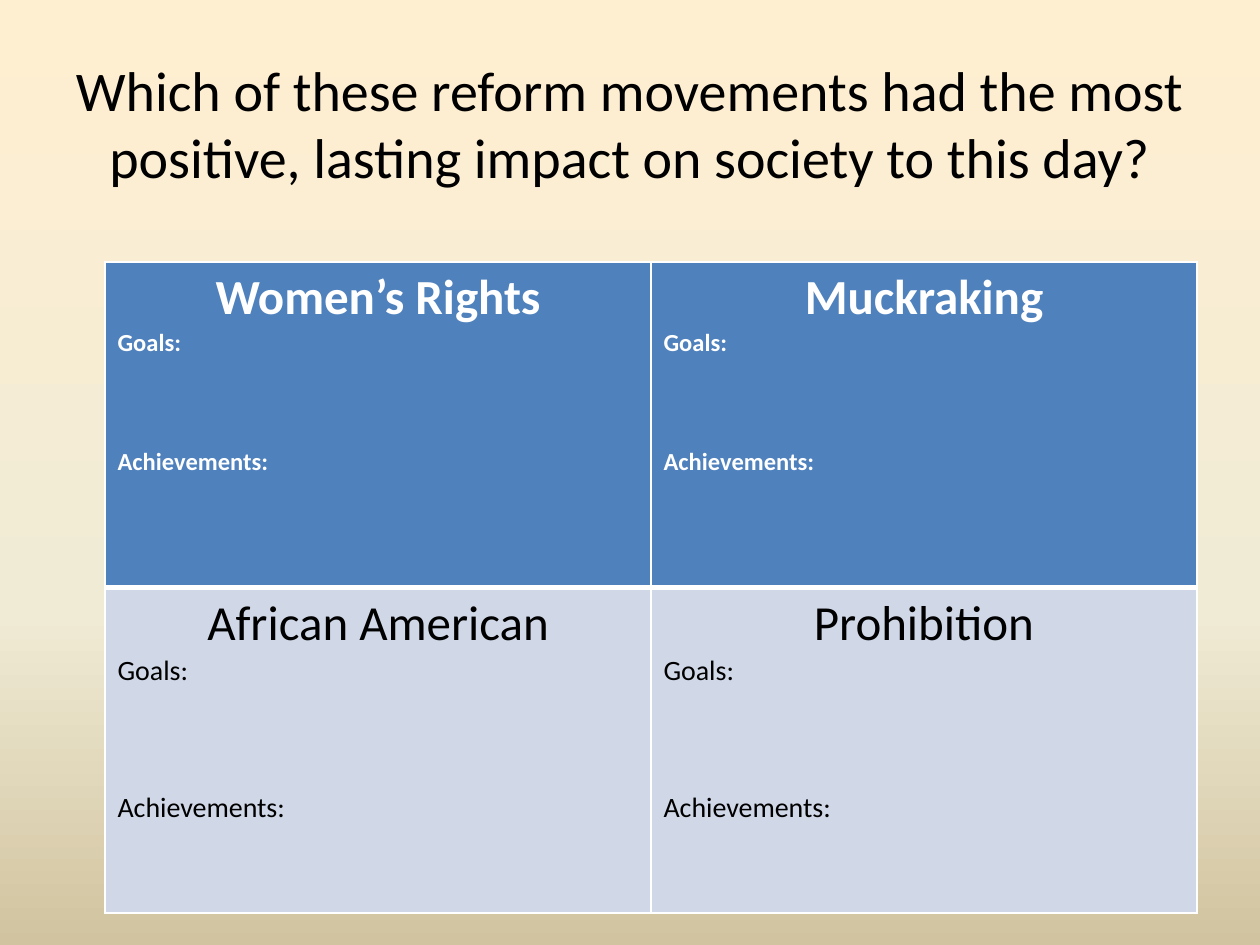
from copy import deepcopy

from lxml import etree
from pptx import Presentation
from pptx.dml.color import RGBColor
from pptx.enum.text import MSO_ANCHOR, PP_ALIGN
from pptx.oxml.ns import qn
from pptx.util import Pt

MIDDLE = MSO_ANCHOR.MIDDLE
LEFT, CENTER = PP_ALIGN.LEFT, PP_ALIGN.CENTER
BLACK = RGBColor(0x00, 0x00, 0x00)
WHITE = RGBColor(0xFF, 0xFF, 0xFF)
BLUE = RGBColor(0x4F, 0x81, 0xBD)
PALE = RGBColor(0xD0, 0xD8, 0xE8)
CREAM = RGBColor(0xFF, 0xEF, 0xD1)
IVORY = RGBColor(0xF0, 0xEB, 0xD5)
SAND = RGBColor(0xD1, 0xC3, 0x9F)
FONT = "Calibri"

# Content
TITLE = ("Which of these reform movements had the most positive, "
         "lasting impact on society to this day?")
LABELS = ["Goals:", "Achievements:"]
ROWS = [  # names, label size, text colour, fill, bold
    (["Women’s Rights", "Muckraking"], 14, WHITE, BLUE, True),
    (["African American", "Prohibition"], 16, BLACK, PALE, False),
]
STOPS = [(0, CREAM), (0.65, IVORY), (1, SAND)]

# Layout in px
SLIDE = (1260, 945)
TITLE_BOX = (0, 84, 1260, 78)
GRID_BOX = (105, 262, 1092, 651)
GAP_LINES = 3  # writing room above "Achievements:"
LINE = 1.22  # line height per point of text


def px(*sizes):
    return [round(size * 914400 / 126) for size in sizes]


def write(par, text, size, color, bold=False, align=LEFT):
    par.alignment = align
    run = par.add_run()
    run.text = text
    run.font.name = FONT
    run.font.size = Pt(size)
    run.font.bold = bold
    run.font.color.rgb = color


def border(cell, widths):
    props = cell._tc.get_or_add_tcPr()
    for spot, (side, width) in enumerate(widths.items()):
        line = etree.Element(qn("a:ln" + side), w=str(Pt(width)))
        fill = etree.SubElement(line, qn("a:solidFill"))
        etree.SubElement(fill, qn("a:srgbClr"), val=str(WHITE))
        props.insert(spot, line)


def main():
    prs = Presentation()
    prs.slide_width, prs.slide_height = px(*SLIDE)
    slide = prs.slides.add_slide(prs.slide_layouts[6])

    # Background gradient, top to bottom
    back = slide.background.fill
    back.gradient()
    back.gradient_angle = 270
    stops = slide._element.find(".//" + qn("a:gsLst"))
    stops.append(deepcopy(stops[-1]))
    for stop, (place, color) in zip(back.gradient_stops, STOPS):
        stop.position = place
        stop.color.rgb = color

    # Title
    frame = slide.shapes.add_textbox(*px(*TITLE_BOX)).text_frame
    frame.word_wrap = True
    frame.vertical_anchor = MIDDLE
    write(frame.paragraphs[0], TITLE, 32, BLACK, align=CENTER)

    # Table of movements
    grid = slide.shapes.add_table(len(ROWS), 2, *px(*GRID_BOX)).table
    for r, (names, size, color, fill, bold) in enumerate(ROWS):
        edges = {"L": 1, "R": 1, "T": 3 if r else 1, "B": 1 if r else 3}
        for c, name in enumerate(names):
            cell = grid.cell(r, c)
            cell.fill.solid()
            cell.fill.fore_color.rgb = fill
            border(cell, edges)
            frame = cell.text_frame
            write(frame.paragraphs[0], name, 28, color, bold, CENTER)
            for label in LABELS:
                par = frame.add_paragraph()
                write(par, label, size, color, bold)
            par.space_before = Pt(round(GAP_LINES * LINE * size))

    prs.save("out.pptx")


if __name__ == "__main__":
    main()
